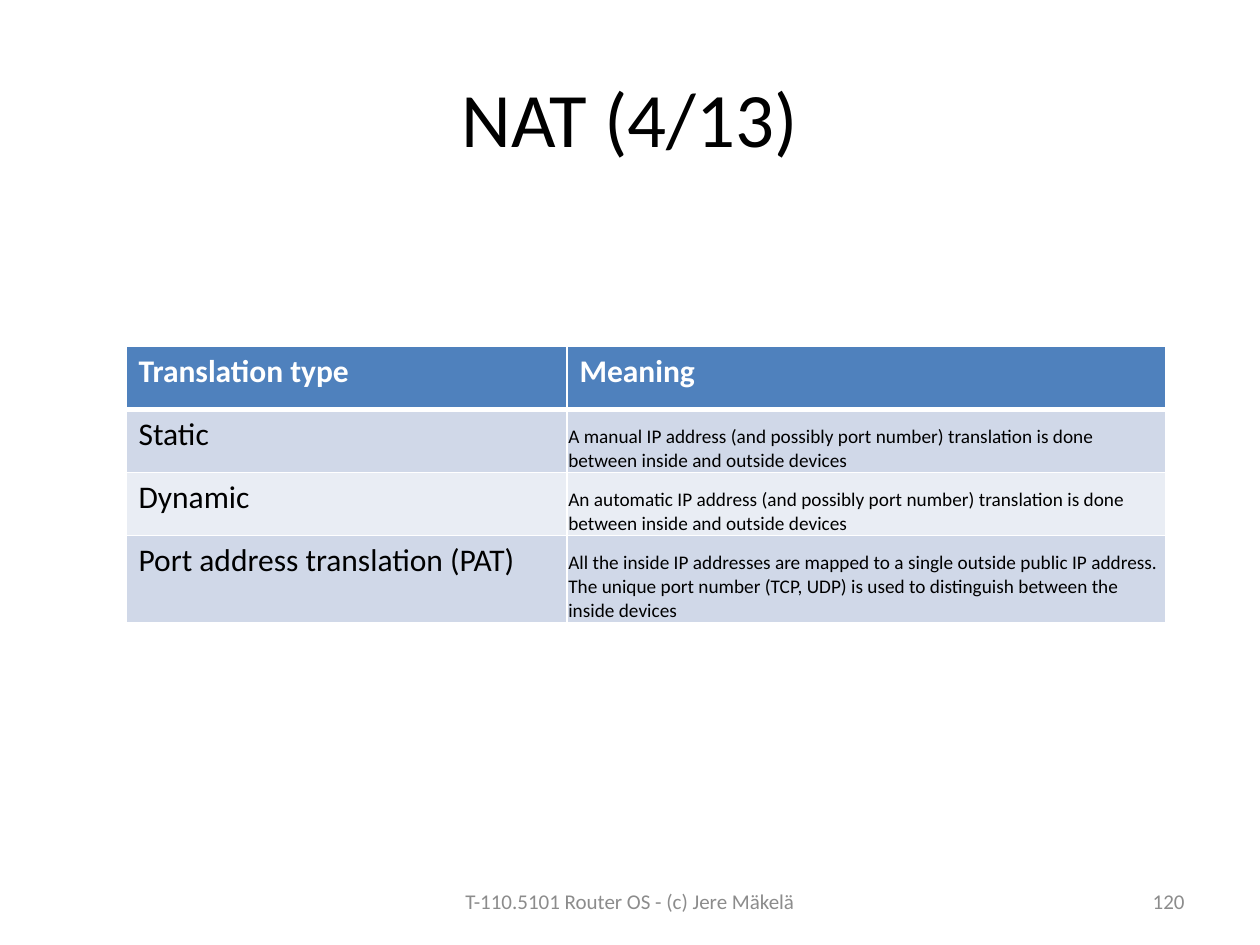
from typing import NamedTuple

from lxml.etree import SubElement
from pptx import Presentation
from pptx.dml.color import RGBColor
from pptx.enum.text import MSO_ANCHOR as Anchor, PP_ALIGN as Align
from pptx.oxml.ns import qn
from pptx.util import Pt

FONT = "Calibri"
WHITE, BLACK, GREY = "FFFFFF", "000000", "8C8C8C"
HEADER_FILL = "4F81BD"
BAND_FILLS = ("D0D8E8", "E9EDF4")


class Box(NamedTuple):
    left: float
    top: float
    width: float
    height: float


class FooterText(NamedTuple):
    text: str
    box: Box
    align: Align


class TableRow(NamedTuple):
    kind: str
    meaning: str
    height: float


TITLE_BOX = Box(36, 21.6, 648, 90)
TABLE_BOX = Box(72, 198, 594, 157.68)
COLUMN_WIDTHS = (252, 342)

FOOTERS = (
    FooterText("T-110.5101 Router OS - (c) Jere Mäkelä", Box(246, 500.4, 228, 28.8), Align.CENTER),
    FooterText("120", Box(516, 500.4, 168, 28.8), Align.RIGHT),
)

ROWS = (
    TableRow("Translation type", "Meaning", 36),
    TableRow("Static", "A manual IP address (and possibly port number) translation "
             "is done between inside and outside devices", 36),
    TableRow("Dynamic", "An automatic IP address (and possibly port number) translation "
             "is done between inside and outside devices", 36),
    TableRow("Port address translation (PAT)",
             "All the inside IP addresses are mapped to a single outside public IP address. "
             "The unique port number (TCP, UDP) is used to distinguish between the inside devices",
             49.68),
)


def rgb(color: str) -> RGBColor:
    return RGBColor.from_string(color)


def set_text(tf, text: str, size: float, color: str, align: Align = Align.LEFT,
             bold: bool = False) -> None:
    tf.text = text
    p = tf.paragraphs[0]
    p.alignment = align
    for r in p.runs:
        r.font.name = FONT
        r.font.size = Pt(size)
        r.font.bold = bold
        r.font.color.rgb = rgb(color)


def set_borders(cell, top: float, bottom: float) -> None:
    tc_pr = cell._tc.get_or_add_tcPr()
    for side, width in (("L", 1), ("R", 1), ("T", top), ("B", bottom)):
        ln = SubElement(tc_pr, qn(f"a:ln{side}"), w=str(Pt(width)))
        fill = SubElement(ln, qn("a:solidFill"))
        SubElement(fill, qn("a:srgbClr"), val=WHITE)


def add_title(s, text: str) -> None:
    sp = s.shapes.title
    sp.left, sp.top, sp.width, sp.height = map(Pt, TITLE_BOX)
    sp.text_frame.vertical_anchor = Anchor.MIDDLE
    set_text(sp.text_frame, text, 44, BLACK, Align.CENTER)


def add_footer(s, footer: FooterText) -> None:
    tf = s.shapes.add_textbox(*map(Pt, footer.box)).text_frame
    tf.word_wrap = True
    tf.vertical_anchor = Anchor.MIDDLE
    set_text(tf, footer.text, 12, GREY, footer.align)


def format_cell(cell, text: str, row: int, col: int) -> None:
    is_header = row == 0
    is_meaning = col == 1 and not is_header
    set_borders(cell, top=3 if row == 1 else 1, bottom=3 if is_header else 1)
    cell.fill.solid()
    cell.fill.fore_color.rgb = rgb(HEADER_FILL if is_header else BAND_FILLS[(row - 1) % 2])
    if is_meaning:
        cell.vertical_anchor = Anchor.BOTTOM
        cell.margin_left = cell.margin_top = cell.margin_right = Pt(0.75)
        cell.margin_bottom = Pt(0)
    set_text(cell.text_frame, text, 11 if is_meaning else 18,
             WHITE if is_header else BLACK, bold=is_header)


def add_translation_table(s) -> None:
    table = s.shapes.add_table(len(ROWS), len(COLUMN_WIDTHS), *map(Pt, TABLE_BOX)).table
    for column, width in zip(table.columns, COLUMN_WIDTHS):
        column.width = Pt(width)
    for i, row in enumerate(ROWS):
        table.rows[i].height = Pt(row.height)
        for j, text in enumerate((row.kind, row.meaning)):
            format_cell(table.cell(i, j), text, i, j)


def main() -> None:
    prs = Presentation()
    prs.slide_width, prs.slide_height = Pt(720), Pt(540)
    s = prs.slides.add_slide(prs.slide_layouts[5])

    # Title
    add_title(s, "NAT (4/13)")

    # Translation types
    add_translation_table(s)

    # Footer and page number
    for footer in FOOTERS:
        add_footer(s, footer)

    prs.save("out.pptx")


if __name__ == "__main__":
    main()
